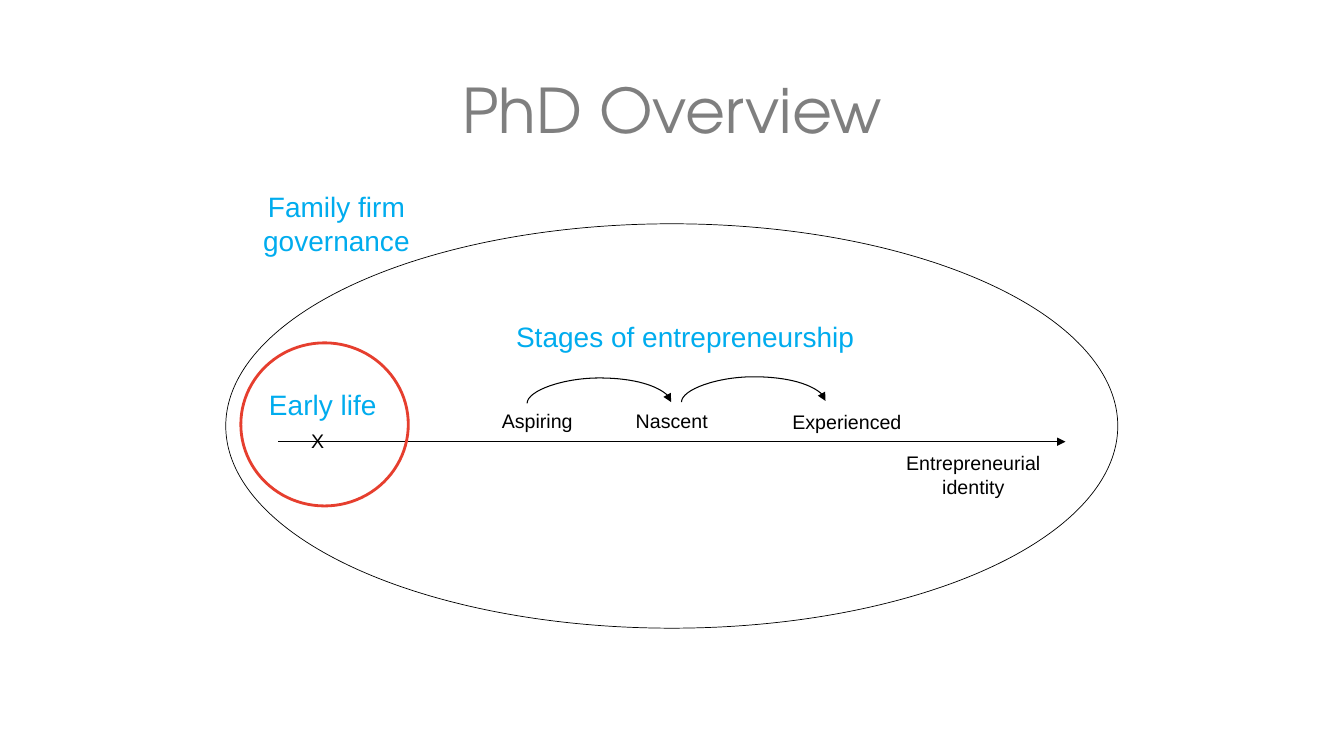
"""Build the PhD overview slide: stages of entrepreneurship along an identity axis."""
from lxml.etree import SubElement
from pptx import Presentation
from pptx.dml.color import RGBColor
from pptx.enum.shapes import MSO_CONNECTOR, MSO_SHAPE
from pptx.enum.text import MSO_ANCHOR, MSO_AUTO_SIZE, PP_ALIGN
from pptx.oxml.ns import qn
from pptx.util import Cm, Pt

COLOURS = {"title": "7F7F7F", "theme": "00ACEE", "ink": "000000", "focus": "E63E2E"}
BODY_FONT, TITLE_FONT = "Arial", "TeX Gyre Adventor"
THEME_SIZE, LABEL_SIZE = 20, 14

TITLE = ("PhD Overview", (2.34, 1.02, 29.21, 3.68))
THEMES = [
    ("Early life", (6.27, 9.63, 3.73, 1.11)),
    ("Stages of entrepreneurship", (12.57, 7.92, 9.4, 1.11)),
    ("Family firm governance", (6.27, 4.65, 4.42, 1.96)),
]
LABELS = [
    ("Aspiring", (12.27, 10.19, 2.54, 0.86)),
    ("Nascent", (15.52, 10.19, 2.82, 0.86)),
    ("Experienced", (19.53, 10.2, 3.63, 0.86)),
    ("Entrepreneurial identity", (21.78, 11.25, 5.5, 0.86)),
]
MARKER = ("X", (7.59, 10.69, 1.19, 0.86))
ELLIPSES = [
    ((5.69, 5.64, 22.48, 10.19), "ink", 0.5),
    ((6.07, 8.64, 4.22, 4.11), "focus", 2),
]
AXIS = (7.01, 11.13, 26.85, 11.13)
ARC_CENTRES = [(15.1, 10.15), (18.99, 10.12)]
ARC_SPAN, ARC_DROP, ARC_RISE = 3.63, 0.03, 0.64


def colour(name):
    return RGBColor.from_string(COLOURS[name])


def format_text(text_frame, font, size, colour_name, alignment):
    paragraph = text_frame.paragraphs[0]
    paragraph.alignment = alignment
    run_font = paragraph.runs[0].font
    run_font.name, run_font.size = font, Pt(size)
    run_font.color.rgb = colour(colour_name)
    return paragraph


def add_label(slide, text, box, size, colour_name, alignment=PP_ALIGN.CENTER):
    text_frame = slide.shapes.add_textbox(*map(Cm, box)).text_frame
    text_frame.text = text
    text_frame.word_wrap = True
    text_frame.auto_size = MSO_AUTO_SIZE.SHAPE_TO_FIT_TEXT
    format_text(text_frame, BODY_FONT, size, colour_name, alignment)


def add_arrow(slide, kind, ends):
    arrow = slide.shapes.add_connector(kind, *map(Cm, ends))
    arrow.line.color.rgb = colour("ink")
    arrow.line.width = Pt(0.75)
    properties = arrow._element.spPr
    SubElement(properties.find(qn("a:ln")), qn("a:tailEnd"), type="triangle")
    SubElement(properties, qn("a:effectLst"))
    return arrow


def add_arc(slide, centre_x, centre_y):
    """Draw a curve as a flipped, tall connector turned a quarter clockwise."""
    half_drop, half_span = ARC_DROP / 2, ARC_SPAN / 2
    arc = add_arrow(slide, MSO_CONNECTOR.CURVE, (
        centre_x + half_drop, centre_y + half_span,
        centre_x - half_drop, centre_y - half_span))
    properties = arc._element.spPr
    properties.find(qn("a:xfrm")).set("rot", str(90 * 60000))
    geometry = properties.find(qn("a:prstGeom"))
    adjustments = geometry.find(qn("a:avLst"))
    if adjustments is None:
        adjustments = SubElement(geometry, qn("a:avLst"))
    bend = round(ARC_RISE / ARC_DROP * 100000)
    SubElement(adjustments, qn("a:gd"), name="adj1", fmla=f"val {bend}")


def add_ellipse(slide, box, colour_name, width):
    ellipse = slide.shapes.add_shape(MSO_SHAPE.OVAL, *map(Cm, box))
    ellipse.shadow.inherit = False
    ellipse.fill.background()
    ellipse.line.color.rgb = colour(colour_name)
    ellipse.line.width = Pt(width)


def add_title(slide, text, box):
    title = slide.shapes.title
    title.left, title.top, title.width, title.height = map(Cm, box)
    title.text_frame.text = text
    title.text_frame.vertical_anchor = MSO_ANCHOR.MIDDLE
    paragraph = format_text(title.text_frame, TITLE_FONT, 44, "title", PP_ALIGN.CENTER)
    paragraph.line_spacing = 0.9


def main():
    presentation = Presentation()
    presentation.slide_width, presentation.slide_height = Cm(33.87), Cm(19.05)
    slide = presentation.slides.add_slide(presentation.slide_layouts[5])
    add_title(slide, *TITLE)
    add_arrow(slide, MSO_CONNECTOR.STRAIGHT, AXIS)
    add_label(slide, *MARKER, LABEL_SIZE, "ink", PP_ALIGN.LEFT)
    for text, box in THEMES:
        add_label(slide, text, box, THEME_SIZE, "theme")
    for text, box in LABELS:
        add_label(slide, text, box, LABEL_SIZE, "ink")
    for centre in ARC_CENTRES:
        add_arc(slide, *centre)
    for ellipse in ELLIPSES:
        add_ellipse(slide, *ellipse)
    presentation.save("out.pptx")


if __name__ == "__main__":
    main()
